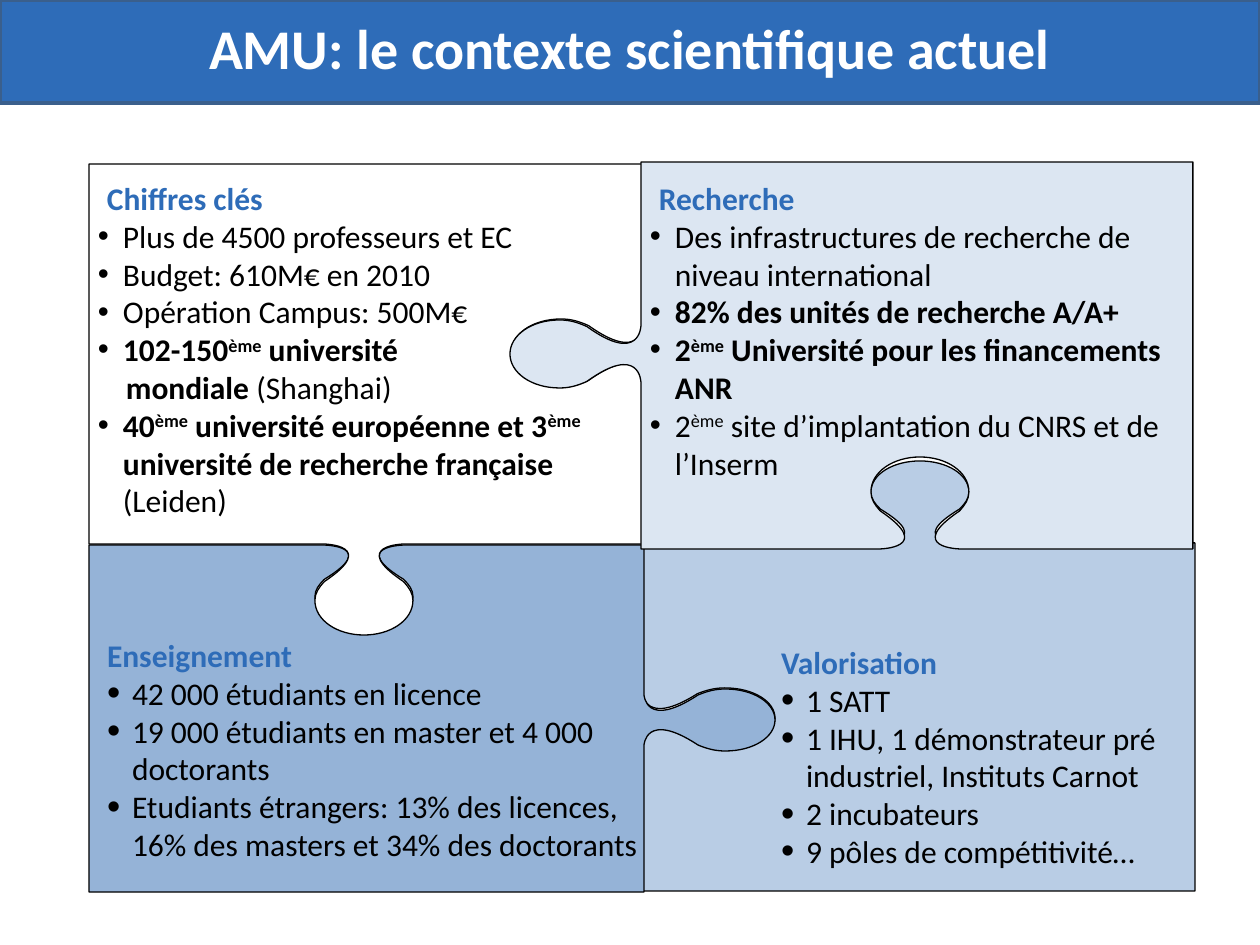
from dataclasses import dataclass

from lxml.etree import SubElement
from pptx import Presentation
from pptx.dml.color import RGBColor
from pptx.enum.shapes import MSO_SHAPE
from pptx.enum.text import MSO_ANCHOR, PP_ALIGN
from pptx.oxml.ns import qn
from pptx.util import Pt

SCALE = 914400 / 126


@dataclass(frozen=True)
class Theme:
    font: str = "Calibri"
    title: int = 32
    body: int = 18
    blue: str = "2E6CB8"
    rim: str = "3A5F8C"
    white: str = "FFFFFF"
    black: str = "000000"
    pale: str = "DCE6F2"
    light: str = "B9CDE5"
    mid: str = "95B3D7"


THEME = Theme()
HANG = 25
BASE = (0.82, 0)
NECK = [BASE, (-0.31, 0.01), (0.8, 0.41)]
JOINT = [(0.82, 0.42)] * 3
CHEEK = [(0.92, 0.48), (1, 0.54), (1, 0.62)]
CROWN = [(1, 0.84), (0.54, 1), (0, 1)]
HALF = [BASE] + NECK + JOINT + CHEEK + CROWN
KNOB = [(-u, v) for u, v in [BASE] * 2 + HALF] + HALF[-2::-1]


def emu(px):
    return round(px * SCALE)


def paint(shape, fill, line, width):
    shape.shadow.inherit = False
    shape.fill.solid()
    shape.fill.fore_color.rgb = RGBColor.from_string(fill)
    shape.line.color.rgb = RGBColor.from_string(line)
    shape.line.width = Pt(width)


def outline(box, tabs):
    left, top, wide, high = box
    sides = {
        "top": (left, top, 1, 0, wide),
        "right": (left + wide, top, 0, 1, high),
        "bottom": (left + wide, top + high, -1, 0, wide),
        "left": (left, top + high, 0, -1, high),
    }
    for side, (x, y, dx, dy, size) in sides.items():
        yield from [(x, y)] * 3
        if side not in tabs:
            continue
        mid, half, depth = tabs[side]
        if dx + dy < 0:
            mid = size - mid
        for u, v in KNOB:
            along, out = mid + u * half, v * depth
            yield x + dx * along + dy * out, y + dy * along - dx * out


def curve(shape):
    lines = list(shape._element.iter(qn("a:lnTo")))
    for trio in zip(lines[::3], lines[1::3], lines[2::3]):
        parent = trio[0].getparent()
        bend = parent.makeelement(qn("a:cubicBezTo"))
        trio[0].addprevious(bend)
        for line in trio:
            bend.append(line[0])
            parent.remove(line)


def piece(slide, box, fill, tabs):
    points = [(emu(x), emu(y)) for x, y in outline(box, tabs)][2:]
    form = slide.shapes.build_freeform(*points[0], scale=1.0)
    form.add_line_segments(points[1:], close=True)
    shape = form.convert_to_shape()
    curve(shape)
    paint(shape, fill, THEME.black, 0.75)


def write(para, text, size, color, style=""):
    run = para.add_run()
    run.text = text
    font = run.font
    font.name = THEME.font
    font.size = Pt(size)
    font.bold = "b" in style
    font.color.rgb = RGBColor.from_string(color)
    if "s" in style:
        run._r.get_or_add_rPr().set("baseline", "30000")


def bullet(para, size):
    props = para._p.get_or_add_pPr()
    props.set("marL", str(emu(HANG)))
    props.set("indent", str(-emu(HANG)))
    SubElement(props, qn("a:buSzPct")).set("val", str(size * 1000))
    SubElement(props, qn("a:buFont")).set("typeface", "Arial")
    SubElement(props, qn("a:buChar")).set("char", "•")


def indent(para, px):
    para._p.get_or_add_pPr().set("marL", str(emu(px)))


def note(slide, box, head, shift, dot, items):
    frame = slide.shapes.add_textbox(*map(emu, box)).text_frame
    frame.word_wrap = True
    frame.margin_left = frame.margin_right = 0
    frame.margin_top = frame.margin_bottom = 0
    para = frame.paragraphs[0]
    indent(para, shift)
    write(para, head, THEME.body, THEME.blue, "b")
    for inset, runs in items:
        para = frame.add_paragraph()
        if inset:
            indent(para, inset)
        else:
            bullet(para, dot)
        for text, style in runs:
            write(para, text, THEME.body, THEME.black, style)


def banner(slide, box, text):
    left, top, wide, high = box
    bar = slide.shapes.add_shape(MSO_SHAPE.RECTANGLE, *map(emu, box))
    paint(bar, THEME.blue, THEME.rim, 2)
    area = left, top + 7, wide, high - 22
    frame = slide.shapes.add_textbox(*map(emu, area)).text_frame
    frame.word_wrap = True
    frame.vertical_anchor = MSO_ANCHOR.MIDDLE
    para = frame.paragraphs[0]
    para.alignment = PP_ALIGN.CENTER
    write(para, text, THEME.title, THEME.white, "b")


def puzzle(slide, box):
    x, y = box[:2]
    pieces = (
        ((554, 381, 552, 348), THEME.light,
         {"left": (175, 30, -132), "top": (277, 49, 82)}),
        ((0, 383, 555, 347), THEME.mid,
         {"top": (275, 49, -83), "right": (175, 31, 131)}),
        ((0, 2, 554, 380), THEME.white,
         {"right": (189, 34, -132), "bottom": (275, 49, 91)}),
        ((552, 0, 552, 387), THEME.pale,
         {"left": (192, 34, 131), "bottom": (279, 49, -92)}),
    )
    for (left, top, wide, high), fill, tabs in pieces:
        piece(slide, (x + left, y + top, wide, high), fill, tabs)

    notes = (
        ((18, 474, 537, 229), "Enseignement", 0, 120, (
            (0, [("42 000 étudiants en licence", "")]),
            (0, [("19 000 étudiants en master et 4 000 doctorants", "")]),
            (0, [("Etudiants étrangers: 13% des licences, "
                  "16% des masters et 34% des doctorants", "")]),
        )),
        ((9, 17, 541, 344), "Chiffres clés", 9, 100, (
            (0, [("Plus de 4500 professeurs et EC", "")]),
            (0, [("Budget: 610M€ en 2010", "")]),
            (0, [("Opération Campus: 500M€", "")]),
            (0, [("102-150", "b"), ("ème", "bs"), (" université", "b")]),
            (28, [("mondiale ", "b"), ("(Shanghai)", "")]),
            (0, [("40", "b"), ("ème", "bs"),
                 (" université européenne et 3", "b"), ("ème", "bs"),
                 (" université de recherche française ", "b"),
                 ("(Leiden)", "")]),
        )),
        ((692, 481, 410, 229), "Valorisation", 0, 120, (
            (0, [("1 SATT", "")]),
            (0, [("1 IHU, 1 démonstrateur pré industriel, "
                  "Instituts Carnot", "")]),
            (0, [("2 incubateurs", "")]),
            (0, [("9 pôles de compétitivité…", "")]),
        )),
        ((561, 17, 553, 335), "Recherche", 9, 100, (
            (0, [("Des infrastructures de recherche de "
                  "niveau international", "")]),
            (0, [("82% des unités de recherche A/A+", "b")]),
            (0, [("2", "b"), ("ème", "bs"),
                 (" Université pour les financements ANR", "b")]),
            (0, [("2", ""), ("ème", "s"),
                 (" site d’implantation du CNRS et de l’Inserm", "")]),
        )),
    )
    for (left, top, wide, high), *rest in notes:
        note(slide, (x + left, y + top, wide, high), *rest)


def main():
    deck = Presentation()
    deck.slide_width, deck.slide_height = emu(1260), emu(945)
    slide = deck.slides.add_slide(deck.slide_layouts[6])
    banner(slide, (0, 0, 1260, 103), "AMU: le contexte scientifique actuel")
    puzzle(slide, (89, 162, 1106, 730))
    deck.save("out.pptx")


if __name__ == "__main__":
    main()
